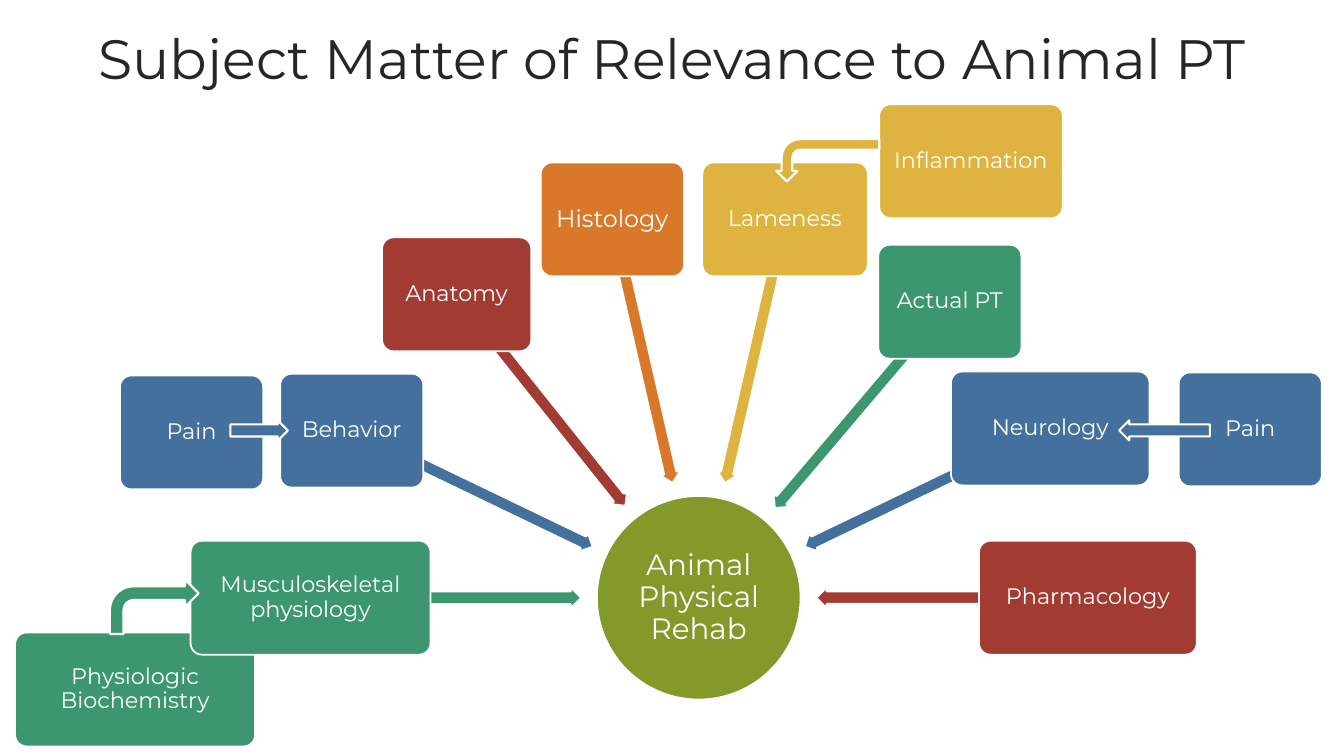
from math import cos, radians, sin

from pptx import Presentation
from pptx.dml.color import RGBColor
from pptx.enum.shapes import MSO_SHAPE
from pptx.enum.text import MSO_ANCHOR, PP_ALIGN
from pptx.util import Inches, Pt

BOX, OVAL = MSO_SHAPE.ROUNDED_RECTANGLE, MSO_SHAPE.OVAL
ARROW, BENT = MSO_SHAPE.LEFT_ARROW, MSO_SHAPE.BENT_ARROW
MIDDLE, CENTER = MSO_ANCHOR.MIDDLE, PP_ALIGN.CENTER

FONT = "Montserrat"
GREEN, BLUE, RED = "3C9770", "44709D", "A23C33"
ORANGE, YELLOW, OLIVE = "D97828", "DEB340", "83992A"
WHITE, INK = "FFFFFF", "262626"

SLIDE_W, SLIDE_H = 13.33, 7.5
HUB_X, HUB_Y, HUB_SIZE = 6.93, 5.93, 2.02
BOX_H = 1.13
ARROW_REACH, ARROW_LENGTH = 2.51, 2.69
STEP = 180 / 7

prs = Presentation()
prs.slide_width, prs.slide_height = Inches(SLIDE_W), Inches(SLIDE_H)
s = prs.slides.add_slide(prs.slide_layouts[6])


def write(sp, text, size, color, inset):
    tf = sp.text_frame
    tf.word_wrap = True
    tf.vertical_anchor = MIDDLE
    tf.margin_left = tf.margin_right = Inches(inset)
    tf.margin_top = tf.margin_bottom = Inches(inset)
    p = tf.paragraphs[0]
    p.text = text
    p.alignment = CENTER
    p.line_spacing = 0.9
    p.font.name, p.font.size = FONT, Pt(size)
    p.font.color.rgb = RGBColor.from_string(color)


def shape(kind, x, y, w, h, color, text="", size=16, turn=0):
    """Add a white-edged shape centred on x, y."""
    sp = s.shapes.add_shape(kind, Inches(x - w / 2), Inches(y - h / 2), Inches(w), Inches(h))
    sp.shadow.inherit = False
    sp.fill.solid()
    sp.fill.fore_color.rgb = RGBColor.from_string(color)
    sp.line.color.rgb = RGBColor.from_string(WHITE)
    sp.line.width = Pt(1.25 if text else 1.5)
    sp.rotation = turn
    if kind == BOX:
        sp.adjustments[0] = 0.1
    if kind == ARROW:
        sp.adjustments[0], sp.adjustments[1] = 0.6, 0.5
    if text:
        write(sp, text, size, WHITE, 0.06)
    return sp


# Title
title = s.shapes.add_textbox(0, Inches(-0.15), Inches(SLIDE_W), Inches(1.43))
write(title, "Subject Matter of Relevance to Animal PT", 39.6, INK, 0.1)
title.text_frame.paragraphs[0].line_spacing = 1.0

# Box that lies behind the fan
shape(BOX, 1.34, 6.84, 2.38, BOX_H, GREEN, "Physiologic Biochemistry")

# Hub
hub = shape(OVAL, HUB_X, HUB_Y, HUB_SIZE, HUB_SIZE, OLIVE, "Animal Physical Rehab", 21)
hub.text_frame.margin_left = hub.text_frame.margin_right = Inches(0.01)

# Fan of subjects: text, colour, box width, text size, angle, distance from hub
subjects = [
    ("Musculoskeletal physiology", GREEN, 2.38, 16, 180, 3.85),
    ("Behavior", BLUE, 1.42, 16, 180 + STEP, 3.82),
    ("Anatomy", RED, 1.48, 16, 180 + 2 * STEP, 3.85),
    ("Histology", ORANGE, 1.42, 17, 180 + 3 * STEP, 3.85),
    ("Lameness", YELLOW, 1.64, 16, 180 + 4 * STEP, 3.85),
    ("Actual PT", GREEN, 1.42, 16, 310.3, 3.85),
    ("Neurology", BLUE, 1.97, 16, 180 + 6 * STEP, 3.87),
    ("Pharmacology", RED, 2.16, 16, 360, 3.86),
]
for text, color, width, size, angle, reach in subjects:
    dx, dy = cos(radians(angle)), sin(radians(angle))
    shape(ARROW, HUB_X + ARROW_REACH * dx, HUB_Y + ARROW_REACH * dy,
          ARROW_LENGTH, 0.21, color, turn=angle % 360)
    shape(BOX, HUB_X + reach * dx, HUB_Y + reach * dy, width, BOX_H, color, text, size)

# Outer boxes
for text, color, x, y, width in [
    ("Pain", BLUE, 1.9, 4.29, 1.42),
    ("Inflammation", YELLOW, 9.63, 1.6, 1.82),
    ("Pain", BLUE, 12.4, 4.26, 1.42),
]:
    shape(BOX, x, y, width, BOX_H, color, text)

# Arrows from the outer boxes
shape(ARROW, 2.57, 4.27, 0.57, 0.2, BLUE, turn=180)
shape(ARROW, 11.55, 4.27, 0.9, 0.2, BLUE)
shape(BENT, 1.53, 6.02, 0.88, 0.54, GREEN)
down = shape(BENT, 8.21, 1.59, 0.42, 1.02, YELLOW, turn=90)
down._element.spPr.xfrm.set("flipV", "1")

prs.save("out.pptx")
